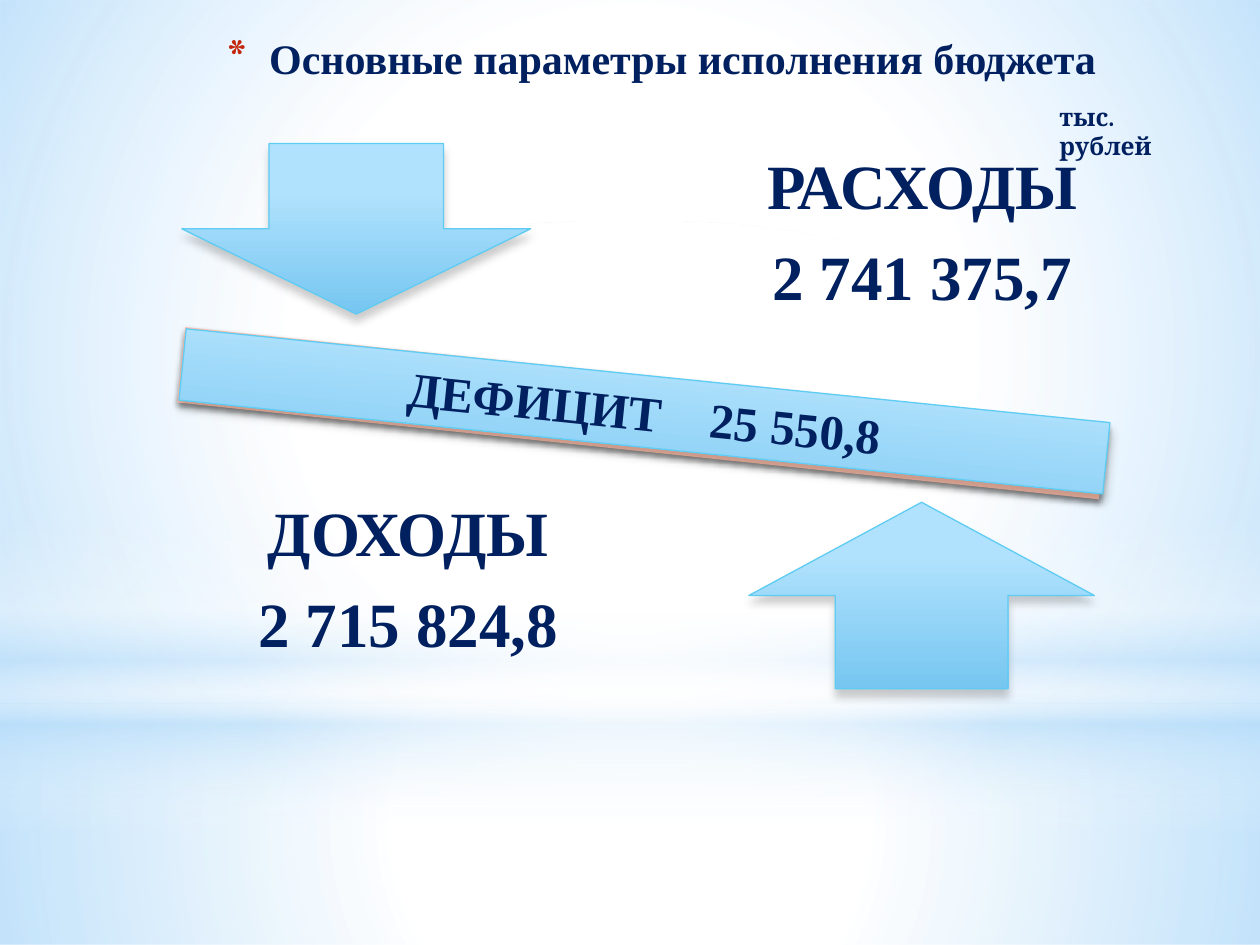
from lxml import etree
from pptx import Presentation
from pptx.dml.color import RGBColor
from pptx.enum import shapes, text
from pptx.oxml import ns
from pptx.util import Pt

NAVY = RGBColor(0x00, 0x20, 0x60)
WHITE = RGBColor(0xFF, 0xFF, 0xFF)
PALE = RGBColor(0xB4, 0xDC, 0xFA)
SKY = RGBColor(0xB1, 0xE2, 0xFD)
BLUE = RGBColor(0x76, 0xC6, 0xF1)
CYAN = RGBColor(0x5E, 0xCC, 0xF3)
PEACH = RGBColor(0xFF, 0xC0, 0xAC)
RED = RGBColor(0xC3, 0x26, 0x0C)
BLACK = RGBColor(0, 0, 0)

SERIF, LABEL_FONT = "Times New Roman", "Cambria"
KIND = shapes.MSO_SHAPE
ALIGN = text.PP_ALIGN
ANCHOR = text.MSO_ANCHOR


def child(parent, tag, **attrs):
    el = etree.SubElement(parent, ns.qn("a:" + tag))
    for name, value in attrs.items():
        el.set(name, str(value))
    return el


def color(parent, rgb, opacity=100):
    el = child(parent, "srgbClr", val=rgb)
    if opacity < 100:
        child(el, "alpha", val=opacity * 1000)


class SlideBuilder:
    def __init__(self, slide):
        self.s = slide

    def gradient(self, sp, stops, radial=False):
        sp.fill.gradient()
        grad = sp._element.spPr.find(ns.qn("a:gradFill"))
        for el in list(grad):
            grad.remove(el)
        gs_list = child(grad, "gsLst")
        for pos, rgb, opacity in stops:
            color(child(gs_list, "gs", pos=pos * 1000), rgb, opacity)
        if radial:
            circle = child(grad, "path", path="circle")
            child(circle, "fillToRect", l=50000, t=50000, r=50000, b=50000)
        else:
            child(grad, "lin", ang=5400000, scaled=0)

    def shadow(self, sp, opacity, blur, dist):
        effects = sp._element.spPr.find(ns.qn("a:effectLst"))
        outer = child(effects, "outerShdw", blurRad=Pt(blur), dist=Pt(dist),
                      dir=5400000, rotWithShape=0)
        color(outer, BLACK, opacity)

    def shape(self, kind, box, rotation=0):
        sp = self.s.shapes.add_shape(kind, *map(Pt, box))
        sp.rotation = rotation
        sp.shadow.inherit = False
        sp.line.fill.background()
        return sp

    def backdrop(self, kind, box, stops, radial=True):
        self.gradient(self.shape(kind, box), stops, radial)

    def glossy(self, kind, box, rotation=0):
        sp = self.shape(kind, box, rotation)
        self.gradient(sp, [(28, SKY, 100), (100, BLUE, 100)])
        sp.line.color.rgb = CYAN
        sp.line.width = Pt(0.75)
        self.shadow(sp, 20, 5, 4)
        return sp

    def run(self, p, words, size, font=SERIF):
        r = p.add_run()
        r.text = words
        r.font.name, r.font.size, r.font.bold = font, Pt(size), True
        r.font.color.rgb = NAVY
        return r

    def title(self, words, box):
        sp = self.s.shapes.title
        sp.left, sp.top, sp.width, sp.height = map(Pt, box)
        self.s.shapes._spTree.append(sp._element)  # in front of the backdrop
        p = sp.text_frame.paragraphs[0]
        p.alignment = ALIGN.CENTER
        pPr = p._p.get_or_add_pPr()
        pPr.set("marL", str(Pt(25)))
        pPr.set("indent", str(-Pt(25)))
        color(child(pPr, "buClr"), RED)
        child(pPr, "buSzPct", val=128000)
        child(pPr, "buFont", typeface=LABEL_FONT)
        child(pPr, "buChar", char="*")
        self.run(p, words, 24)

    def textbox(self, box):
        tf = self.s.shapes.add_textbox(*map(Pt, box)).text_frame
        tf.word_wrap = True
        return tf

    def amount(self, name, value, box):
        tf = self.textbox(box)
        tf.vertical_anchor = ANCHOR.MIDDLE
        tf.margin_left = tf.margin_right = Pt(20)
        tf.margin_top = tf.margin_bottom = Pt(20)
        for p, words in zip((tf.paragraphs[0], tf.add_paragraph()), (name, value)):
            p.alignment = ALIGN.CENTER
            p.line_spacing = 0.9
            p.space_after = Pt(13)
            self.run(p, words, 36)


def main():
    prs = Presentation()
    prs.slide_width, prs.slide_height = Pt(720), Pt(540)
    b = SlideBuilder(prs.slides.add_slide(prs.slide_layouts[5]))

    # Backdrop: lit wall, floor, horizon band and glow
    b.backdrop(KIND.RECTANGLE, (0, 402, 720, 138),
               [(0, WHITE, 91), (37, WHITE, 76), (100, PALE, 79)])
    b.backdrop(KIND.RECTANGLE, (0, 0, 720, 402),
               [(0, WHITE, 89), (48, WHITE, 62), (100, PALE, 79)])
    b.backdrop(KIND.RECTANGLE, (0, 296.5, 720, 180),
               [(0, WHITE, 0), (29, WHITE, 30), (45, PALE, 40),
                (55, WHITE, 26), (65, PALE, 60), (100, WHITE, 0)], radial=False)
    b.backdrop(KIND.OVAL, (0, 126, 720, 402), [(0, WHITE, 100), (56, WHITE, 0)])

    b.title("Основные параметры исполнения бюджета", (112.3, 15, 530.6, 36))

    # Balance beam behind the deficit bar
    beam = b.shape(KIND.MATH_MINUS, (6.5, 144, 720.7, 184.3), 6)
    beam.fill.solid()
    beam.fill.fore_color.rgb = PEACH
    b.shadow(beam, 45, 3.1, 1.8)

    # Income and expenditure
    b.glossy(KIND.DOWN_ARROW, (103.9, 82, 199.4, 97.5))
    b.amount("ДОХОДЫ", "2 715 824,8", (116, 258.5, 234.7, 147.6))
    b.glossy(KIND.UP_ARROW, (427.9, 287, 197.5, 106.6))
    b.amount("РАСХОДЫ", "2 741 375,7", (409.7, 60.5, 234.7, 147.6))

    # Deficit bar
    bar = b.glossy(KIND.RECTANGLE, (103, 214.6, 530.6, 41), 5.8)
    tf = bar.text_frame
    tf.vertical_anchor = ANCHOR.MIDDLE
    p = tf.paragraphs[0]
    p.alignment = ALIGN.CENTER
    b.run(p, "ДЕФИЦИТ", 28)
    gap = b.run(p, " ", 28)
    gap.font._element.set("spc", "2100")  # one widened space
    b.run(p, "25 550,8", 28)

    # Unit label
    tf = b.textbox((598.3, 54.7, 95, 24.5))
    b.run(tf.paragraphs[0], "тыс. рублей", 14, LABEL_FONT)

    prs.save("out.pptx")


if __name__ == "__main__":
    main()
